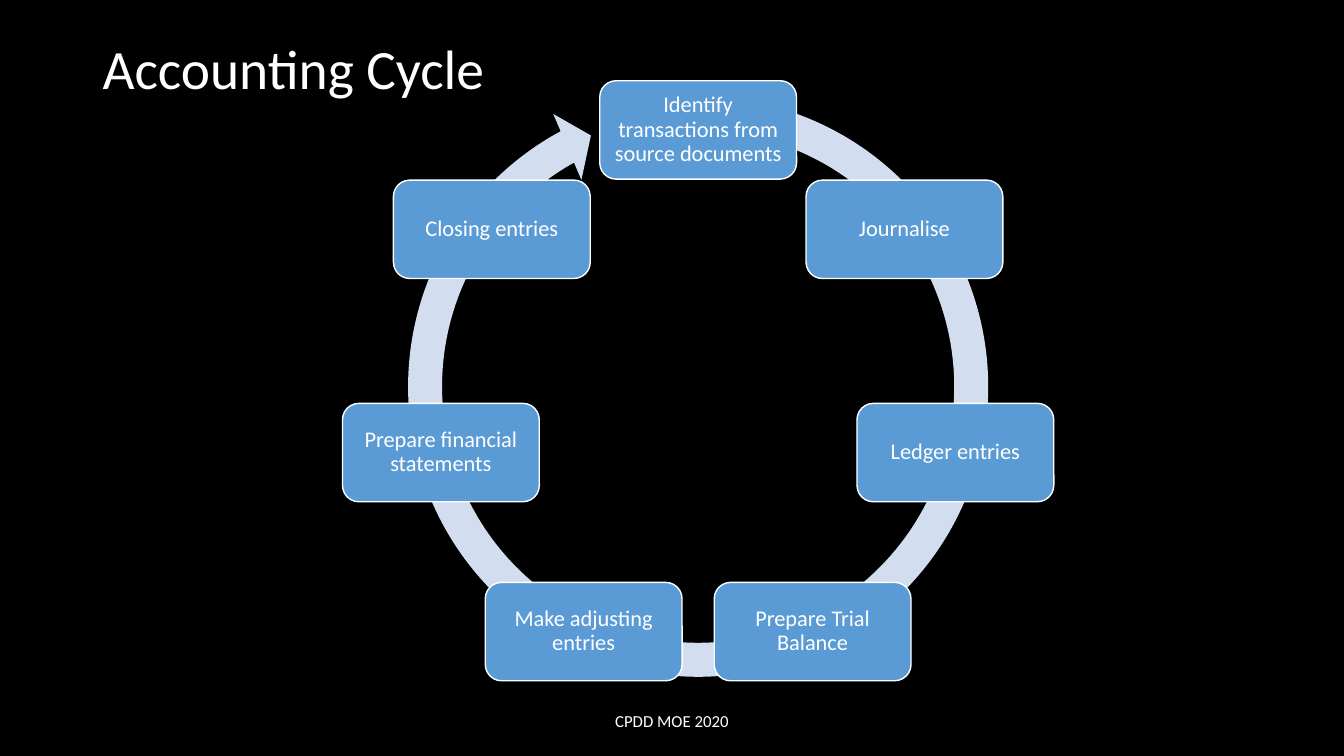
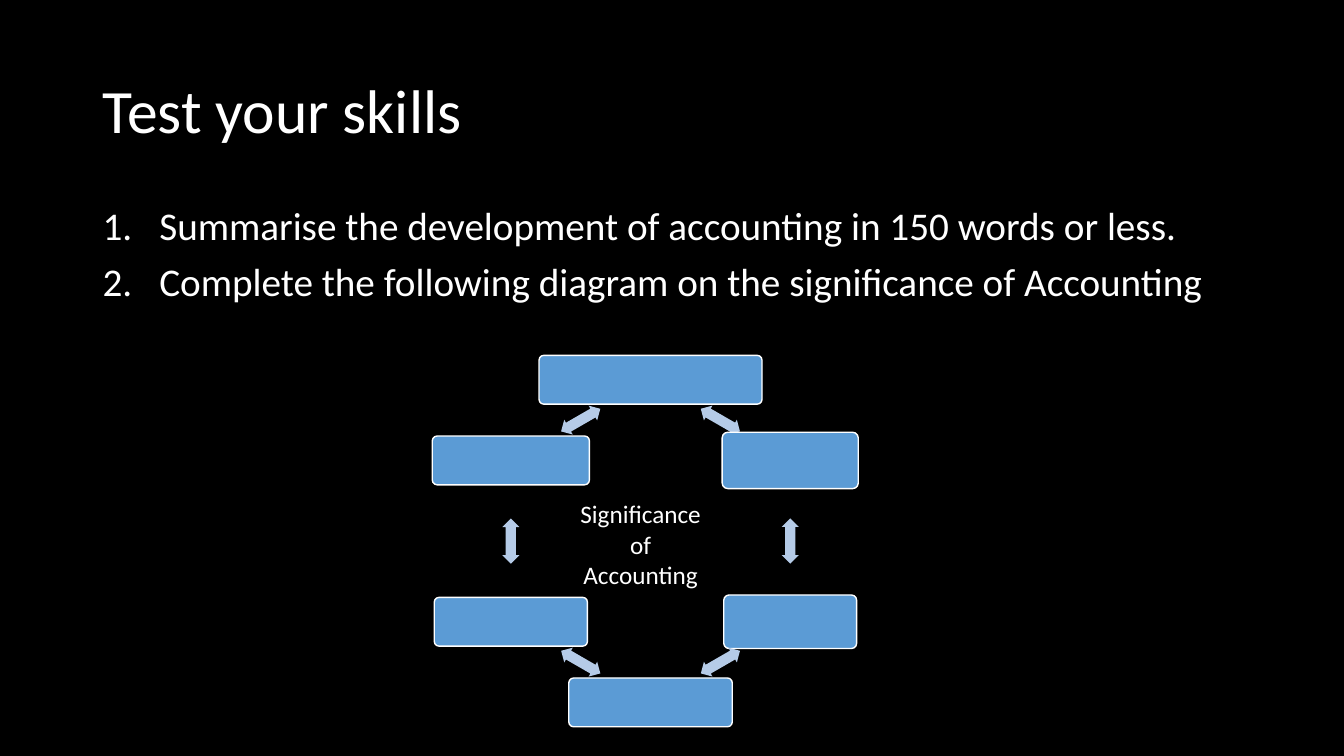
from math import cos, radians, sin
from typing import NamedTuple

from lxml.etree import SubElement
from pptx import Presentation
from pptx.dml.color import RGBColor
from pptx.enum.shapes import MSO_SHAPE as Shape
from pptx.enum.text import MSO_ANCHOR as Anchor, MSO_AUTO_SIZE as AutoSize, PP_ALIGN as Align
from pptx.oxml.ns import qn
from pptx.util import Cm, Pt

COLORS = {
    "background": "000000",
    "text": "FFFFFF",
    "outline": "FFFFFF",
    "node": "5B9BD5",
    "ring": "D2DEEF",
    "arrow": "B5CBE7",
}
FONT = "Calibri"
TITLE_ONLY, TITLE_AND_CONTENT = 5, 1

CYCLE_STEPS = [
    "Identify transactions from source documents",
    "Journalise",
    "Ledger entries",
    "Prepare Trial Balance",
    "Make adjusting entries",
    "Prepare financial statements",
    "Closing entries",
]
TASKS = [
    "Summarise the development of accounting in 150 words or less.",
    "Complete the following diagram on the significance of Accounting",
]
# Width and height of each empty box, clockwise from the top
BLANK_SIZES = [(5.62, 1.23), (3.43, 1.42), (3.35, 1.35),
               (4.12, 1.23), (3.86, 1.23), (3.96, 1.23)]


class Box(NamedTuple):
    """A rectangle in centimetres."""
    left: float
    top: float
    width: float
    height: float

    def lengths(self):
        return [Cm(value) for value in self]

    def center(self):
        return self.left + self.width / 2, self.top + self.height / 2


def centered_box(x, y, width, height):
    return Box(x - width / 2, y - height / 2, width, height)


def point_on_circle(center, radius, angle):
    """Point at an angle in degrees, clockwise from the top."""
    x, y = center
    return x + radius * sin(radians(angle)), y - radius * cos(radians(angle))


def color(name):
    return RGBColor.from_string(COLORS[name])


def set_attributes(target, values):
    for name, value in values.items():
        setattr(target, name, value)


def write_text(shape, lines, size, frame_format=None, **paragraph_format):
    frame = shape.text_frame
    set_attributes(frame, {"word_wrap": True, "auto_size": AutoSize.NONE,
                           "vertical_anchor": Anchor.MIDDLE, **(frame_format or {})})
    frame.text = "\n".join(lines)
    for paragraph in frame.paragraphs:
        set_attributes(paragraph, paragraph_format)
        set_attributes(paragraph.font, {"name": FONT, "size": Pt(size)})
        paragraph.font.color.rgb = color("text")


def place(shape, box):
    set_attributes(shape, dict(zip(("left", "top", "width", "height"), box.lengths())))


def add_title(slide, text, box, size):
    place(slide.shapes.title, box)
    write_text(slide.shapes.title, [text], size, alignment=Align.LEFT, line_spacing=0.9)


def add_label(slide, text, box, size, **frame_format):
    label = slide.shapes.add_textbox(*box.lengths())
    write_text(label, [text], size, frame_format, alignment=Align.CENTER)


def add_footer(slide):
    add_label(slide, "CPDD MOE 2020", Box(11.22, 17.65, 11.43, 1.02), 12)


def add_figure(slide, kind, box, fill, adjustments=(), outlined=False):
    shape = slide.shapes.add_shape(kind, *box.lengths())
    shape.shadow.inherit = False
    shape.fill.solid()
    shape.fill.fore_color.rgb = color(fill)
    if outlined:
        shape.line.color.rgb = color("outline")
        shape.line.width = Pt(1)
    else:
        shape.line.fill.background()
    for index, value in enumerate(adjustments):
        shape.adjustments[index] = value
    return shape


def add_cycle(slide, box, steps):
    """Steps spaced evenly on a ring that ends in an arrowhead."""
    thickness, head = 5.5 / 100, 5.8 / 100
    head_angle, end, start = (degrees * 0.6 for degrees in (5.51, 241.38, 282.82))
    add_figure(slide, Shape.CIRCULAR_ARROW, box, "ring",
               (thickness, head_angle, end, start, head))
    x, y = box.center()
    margins = {f"margin_{side}": Cm(0.15) for side in ("left", "top", "right", "bottom")}
    for index, step in enumerate(steps):
        middle = point_on_circle((x, y + 0.18), 6.65, index * 360 / len(steps))
        node = add_figure(slide, Shape.ROUNDED_RECTANGLE, centered_box(*middle, 4.96, 2.48),
                          "node", outlined=True)
        write_text(node, [step], 16, margins, alignment=Align.CENTER, line_spacing=0.9)


def add_blank_diagram(slide, box, sizes, caption):
    """Empty boxes on a circle, joined by double arrows around a caption."""
    center, radius = box.center(), box.height / 2
    step = 360 / len(sizes)
    for index, size in enumerate(sizes):
        node_angle = index * step
        arrow_angle = node_angle + step / 2
        node = centered_box(*point_on_circle(center, radius, node_angle), *size)
        add_figure(slide, Shape.ROUNDED_RECTANGLE, node, "node", (0.1,), outlined=True)
        middle = point_on_circle(center, radius * cos(radians(step / 2)), arrow_angle)
        arrow = add_figure(slide, Shape.LEFT_RIGHT_ARROW, centered_box(*middle, 1.14, 0.43),
                           "arrow", (0.6, 0.5))
        arrow.rotation = arrow_angle
    x, y = center
    add_label(slide, caption, centered_box(x - 0.25, y + 0.09, 3.63, 2.57), 18,
              vertical_anchor=Anchor.TOP)


def add_numbered_list(slide, box, items):
    body = slide.placeholders[1]
    place(body, box)
    write_text(body, items, 28, {"vertical_anchor": Anchor.TOP}, alignment=Align.LEFT,
               line_spacing=0.9, space_before=Pt(10))
    for paragraph in body.text_frame.paragraphs:
        properties = paragraph._p.get_or_add_pPr()
        properties.set("marL", str(Cm(1.43)))
        properties.set("indent", str(-Cm(1.43)))
        SubElement(properties, qn("a:buFont"), typeface=FONT)
        SubElement(properties, qn("a:buAutoNum"), type="arabicPeriod")


def add_slide(presentation, layout):
    return presentation.slides.add_slide(presentation.slide_layouts[layout])


def build_cycle_slide(presentation):
    slide = add_slide(presentation, TITLE_ONLY)
    add_title(slide, "Accounting Cycle", Box(2.33, 1.02, 29.21, 1.57), 39.6)
    add_cycle(slide, Box(9.81, 1.96, 15.57, 15.57), CYCLE_STEPS)
    add_footer(slide)


def build_skills_slide(presentation):
    slide = add_slide(presentation, TITLE_AND_CONTENT)
    add_title(slide, "Test your skills", Box(2.33, 1.02, 29.21, 3.68), 44)
    add_numbered_list(slide, Box(2.33, 5.08, 29.21, 12.09), TASKS)
    add_blank_diagram(slide, Box(12.33, 9.57, 8.13, 8.13), BLANK_SIZES,
                      "Significance of Accounting")


def main():
    presentation = Presentation()
    set_attributes(presentation, {"slide_width": Cm(33.87), "slide_height": Cm(19.05)})
    background = presentation.slide_master.background.fill
    background.solid()
    background.fore_color.rgb = color("background")
    build_cycle_slide(presentation)
    build_skills_slide(presentation)
    presentation.save("out.pptx")


if __name__ == "__main__":
    main()
